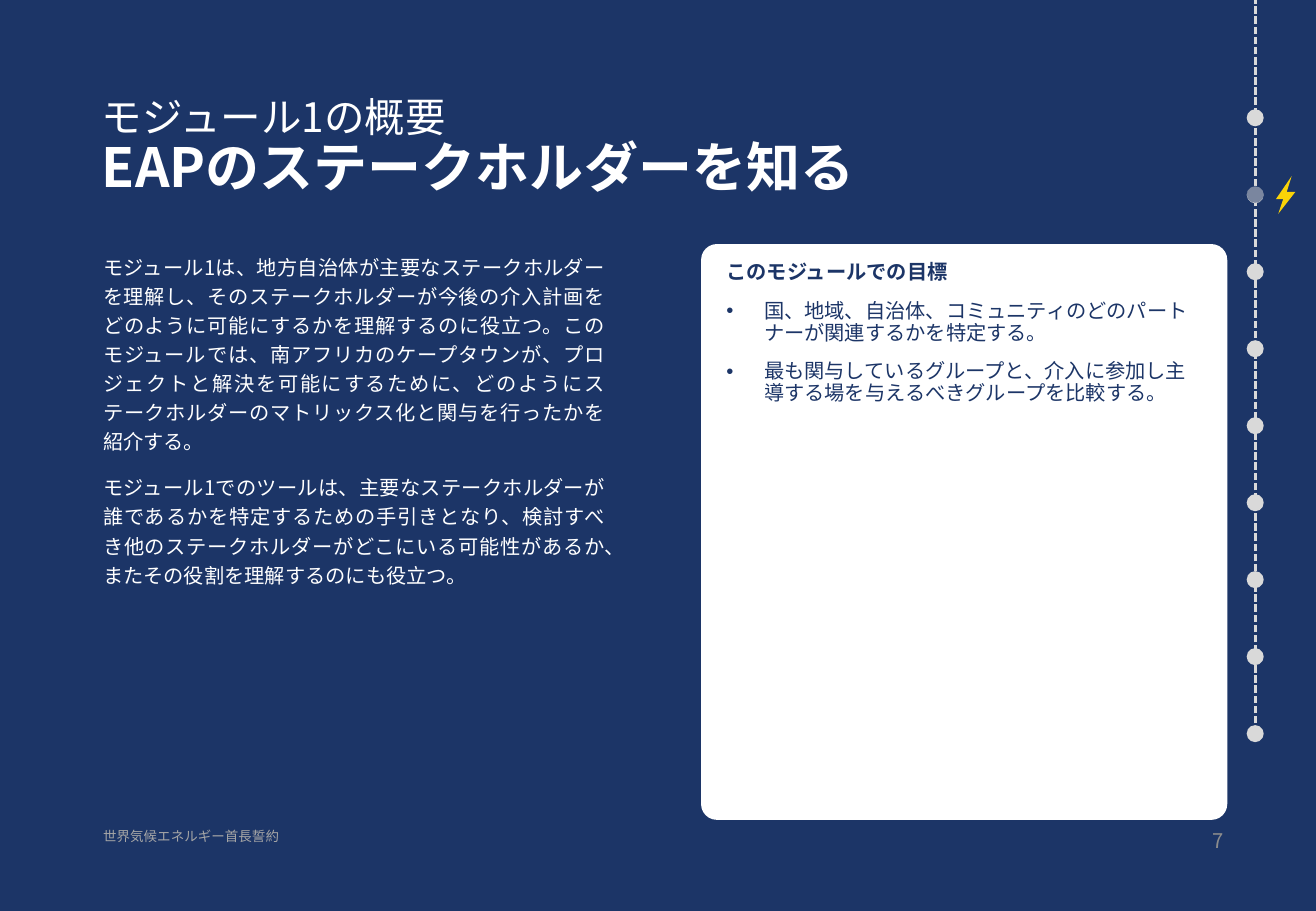
from lxml import etree
from pptx import Presentation
from pptx import util as u
from pptx.dml.color import RGBColor
from pptx.enum import dml, shapes, text
from pptx.oxml.ns import qn

FONT = "Noto Sans CJK JP"
NAVY, WHITE, PALE, YELLOW = "1C3567", "FFFFFF", "D9D9D9", "FAD307"

TITLE = [("モジュール1の概要", 24, False), ("EAPのステークホルダーを知る", 32, True)]
OVERVIEW = [
    "モジュール1は、地方自治体が主要なステークホルダーを理解し、そのステークホルダーが今後の介入計画をどのように可能にするかを理解するのに役立つ。このモジュールでは、南アフリカのケープタウンが、プロジェクトと解決を可能にするために、どのようにステークホルダーのマトリックス化と関与を行ったかを紹介する。",
    "モジュール1でのツールは、主要なステークホルダーが誰であるかを特定するための手引きとなり、検討すべき他のステークホルダーがどこにいる可能性があるか、またその役割を理解するのにも役立つ。",
]
GOALS_HEADING = "このモジュールでの目標"
GOALS = [
    "国、地域、自治体、コミュニティのどのパートナーが関連するかを特定する。",
    "最も関与しているグループと、介入に参加し主導する場を与えるべきグループを比較する。",
]
FOOTER, PAGE = "世界気候エネルギー首長誓約", "7"
BOLT_UNIT = 0.01
BOLT = [
    [(1057, 164), (1050, 164), (1063, 145), (1058, 161)],
    [(1058, 158), (1066, 158), (1052, 176), (1057, 161)],
]
TRACK_X, DOT, DOT_COUNT = 10.33, 0.14, 9
FIRST_DOT, LAST_DOT, CURRENT_DOT = 0.9, 5.97, 1.53

deck = Presentation()
deck.slide_width, deck.slide_height = u.Inches(10.83), u.Inches(7.5)
slide = deck.slides.add_slide(deck.slide_layouts[6])


def paint(fill, colour):
    fill.solid()
    fill.fore_color.rgb = RGBColor.from_string(colour)


def apply(target, formats):
    for name, value in formats.items():
        setattr(target, name, value)


def finish(shape, colour):
    shape.shadow.inherit = False
    paint(shape.fill, colour)
    shape.line.fill.background()
    return shape


def add_shape(kind, box, colour):
    return finish(slide.shapes.add_shape(kind, *map(u.Inches, box)), colour)


def set_frame(shape, left=0.1, top=0.05, right=0.1, bottom=0.05):
    frame = shape.text_frame
    apply(frame, {
        "word_wrap": True,
        "vertical_anchor": text.MSO_ANCHOR.TOP,
        "margin_left": u.Inches(left),
        "margin_top": u.Inches(top),
        "margin_right": u.Inches(right),
        "margin_bottom": u.Inches(bottom),
    })
    return frame


def add_box(box):
    return set_frame(slide.shapes.add_textbox(*map(u.Inches, box)))


def add_run(paragraph, words, size, colour, bold=False):
    run = paragraph.add_run()
    run.text = words
    apply(run.font, {"size": u.Pt(size), "bold": bold, "name": FONT})
    paint(run.font.fill, colour)
    etree.SubElement(run.font._element, qn("a:ea"), typeface=FONT)


def add_bullet(paragraph):
    props = paragraph._p.get_or_add_pPr()
    props.set("marL", str(u.Inches(0.31)))
    props.set("indent", str(-u.Inches(0.31)))
    etree.SubElement(props, qn("a:buFont"), typeface="Arial")
    etree.SubElement(props, qn("a:buChar"), char="•")


def next_paragraph(frame, index, **formats):
    paragraph = frame.add_paragraph() if index else frame.paragraphs[0]
    apply(paragraph, {"space_before": u.Pt(10 if index else 0), **formats})
    return paragraph


paint(slide.background.fill, NAVY)

footer = add_box((0.75, 6.77, 1.83, 0.4))
add_run(footer.paragraphs[0], FOOTER, 8, "A6A6A6")

track = slide.shapes.add_connector(
    shapes.MSO_CONNECTOR.STRAIGHT,
    *map(u.Inches, (TRACK_X, LAST_DOT + DOT / 2, TRACK_X, 0)))
paint(track.line.fill, PALE)
apply(track.line, {"width": u.Pt(1.5), "dash_style": dml.MSO_LINE.SQUARE_DOT})
etree.SubElement(track._element.spPr, qn("a:effectLst"))

dot_left = TRACK_X - DOT / 2
dot_step = (LAST_DOT - FIRST_DOT) / (DOT_COUNT - 1)
for i in range(DOT_COUNT):
    add_shape(shapes.MSO_SHAPE.OVAL, (dot_left, FIRST_DOT + i * dot_step, DOT, DOT), PALE)

overview = add_box((0.75, 2.01, 4.33, 4.76))
for i, words in enumerate(OVERVIEW):
    paragraph = next_paragraph(overview, i, alignment=text.PP_ALIGN.JUSTIFY, line_spacing=1.2)
    add_run(paragraph, words, 12, WHITE)

title = add_box((0.74, 0.75, 9.34, 1.08)).paragraphs[0]
title.line_spacing = 0.9
for i, (words, size, bold) in enumerate(TITLE):
    if i:
        title.add_line_break()
    add_run(title, words, size, WHITE, bold)

card = add_shape(shapes.MSO_SHAPE.ROUNDED_RECTANGLE, (5.77, 2.01, 4.33, 4.74), WHITE)
card.adjustments[0] = 0.03
goals = set_frame(card, left=0.17, top=0.11, right=0.23, bottom=0.12)
for i, words in enumerate([GOALS_HEADING] + GOALS):
    paragraph = next_paragraph(goals, i, alignment=text.PP_ALIGN.LEFT, line_spacing=0.9)
    if i:
        add_bullet(paragraph)
    add_run(paragraph, words, 12, NAVY, bold=i == 0)

page = add_box((9.58, 6.77, 0.59, 0.4)).paragraphs[0]
page.alignment = text.PP_ALIGN.RIGHT
add_run(page, PAGE, 12, "8C8C8C")

for start, *corners in BOLT:
    outline = slide.shapes.build_freeform(*start, scale=u.Inches(BOLT_UNIT))
    outline.add_line_segments(corners, close=True)
    finish(outline.convert_to_shape(), YELLOW)

current = add_shape(shapes.MSO_SHAPE.OVAL, (dot_left, CURRENT_DOT, DOT, DOT), NAVY)
tint = current._element.spPr.find(qn("a:solidFill"))[0]
etree.SubElement(tint, qn("a:alpha"), val="50000")

deck.save("out.pptx")
